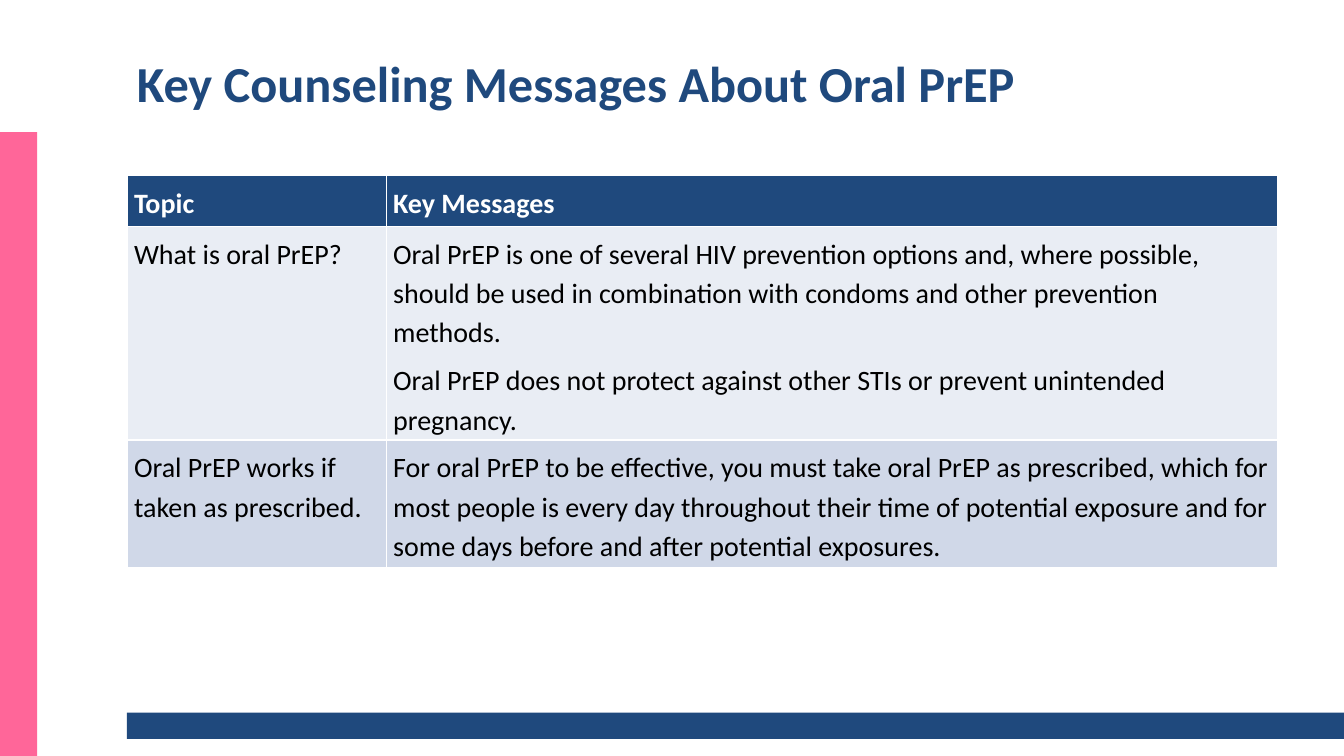
from dataclasses import dataclass

from lxml import etree
from pptx import Presentation
from pptx.dml.color import RGBColor
from pptx.enum.shapes import MSO_SHAPE
from pptx.enum.text import MSO_ANCHOR
from pptx.oxml.ns import qn
from pptx.util import Emu, Pt

RECTANGLE = MSO_SHAPE.RECTANGLE
MIDDLE = MSO_ANCHOR.MIDDLE
TOP = MSO_ANCHOR.TOP
EMU_PER_PX = 9144
FONT = "Calibri"
NAVY, PINK, WHITE, BLACK = "1F497D", "FF6699", "FFFFFF", "000000"
BLANK_LAYOUT = 6


@dataclass(frozen=True)
class Box:
    left: int
    top: int
    width: int
    height: int

    def emu(self) -> tuple:
        return tuple(px(n) for n in (self.left, self.top, self.width, self.height))


@dataclass(frozen=True)
class Bar:
    box: Box
    fill: str


@dataclass(frozen=True)
class Row:
    height: int
    fill: str
    cells: tuple
    color: str = BLACK
    bold: bool = False


BARS = (
    Bar(Box(0, 131, 37, 619), PINK),
    Bar(Box(126, 707, 1207, 26), NAVY),
)
TITLE_BOX = Box(126, 35, 1141, 94)
TABLE_BOX = Box(126, 174, 1141, 383)
COLUMN_WIDTHS = (257, 884)
ROWS = (
    Row(48, NAVY, (("Topic",), ("Key Messages",)), WHITE, True),
    Row(210, "E9EDF4", (
        ("What is oral PrEP?",),
        ("Oral PrEP is one of several HIV prevention options and, where possible, "
         "should be used in combination with condoms and other prevention methods.",
         "Oral PrEP does not protect against other STIs or prevent unintended "
         "pregnancy."),
    )),
    Row(125, "D0D8E8", (
        ("Oral PrEP works if taken as prescribed.",),
        ("For oral PrEP to be effective, you must take oral PrEP as prescribed, "
         "which for most people is every day throughout their time of potential "
         "exposure and for some days before and after potential exposures.",),
    )),
)


def px(length: int) -> Emu:
    return Emu(length * EMU_PER_PX)


def rgb(color: str) -> RGBColor:
    return RGBColor.from_string(color)


def write_text(frame, paragraphs: tuple, *, size: int, color: str, bold: bool,
               line_spacing: float = 1.0, space_after: int = 0,
               anchor=TOP) -> None:
    frame.word_wrap = True
    frame.vertical_anchor = anchor
    for index, text in enumerate(paragraphs):
        paragraph = frame.add_paragraph() if index else frame.paragraphs[0]
        paragraph.line_spacing = line_spacing
        is_last = index == len(paragraphs) - 1
        paragraph.space_after = Pt(0 if is_last else space_after)
        run = paragraph.add_run()
        run.text = text
        run.font.name = FONT
        run.font.size = Pt(size)
        run.font.bold = bold
        run.font.color.rgb = rgb(color)


def add_bar(slide, bar: Bar) -> None:
    shape = slide.shapes.add_shape(RECTANGLE, *bar.box.emu())
    shape.shadow.inherit = False
    shape.fill.solid()
    shape.fill.fore_color.rgb = rgb(bar.fill)
    shape.line.fill.background()


def add_borders(cell, color: str) -> None:
    properties = cell._tc.get_or_add_tcPr()
    for index, side in enumerate(("a:lnL", "a:lnR", "a:lnT", "a:lnB")):
        line = etree.Element(qn(side), w=str(Pt(1)))
        fill = etree.SubElement(line, qn("a:solidFill"))
        etree.SubElement(fill, qn("a:srgbClr"), val=color)
        properties.insert(index, line)


def fill_cell(cell, paragraphs: tuple, row: Row) -> None:
    cell.margin_left = cell.margin_right = px(7)
    cell.margin_top = cell.margin_bottom = px(6)
    cell.fill.solid()
    cell.fill.fore_color.rgb = rgb(row.fill)
    add_borders(cell, WHITE)
    cell.vertical_anchor = TOP
    write_text(cell.text_frame, paragraphs, size=20, color=row.color,
               bold=row.bold, line_spacing=1.15, space_after=6)


def add_message_table(slide) -> None:
    table = slide.shapes.add_table(
        len(ROWS), len(COLUMN_WIDTHS), *TABLE_BOX.emu()).table
    for column, width in zip(table.columns, COLUMN_WIDTHS):
        column.width = px(width)
    for row_index, row in enumerate(ROWS):
        table.rows[row_index].height = px(row.height)
        for column_index, paragraphs in enumerate(row.cells):
            fill_cell(table.cell(row_index, column_index), paragraphs, row)


def main() -> None:
    presentation = Presentation()
    presentation.slide_width = px(1333)
    presentation.slide_height = px(750)
    slide = presentation.slides.add_slide(presentation.slide_layouts[BLANK_LAYOUT])
    for bar in BARS:
        add_bar(slide, bar)
    title = slide.shapes.add_textbox(*TITLE_BOX.emu())
    write_text(title.text_frame, ("Key Counseling Messages About Oral PrEP",),
               size=36, color=NAVY, bold=True, anchor=MIDDLE)
    add_message_table(slide)
    presentation.save("out.pptx")


if __name__ == "__main__":
    main()
